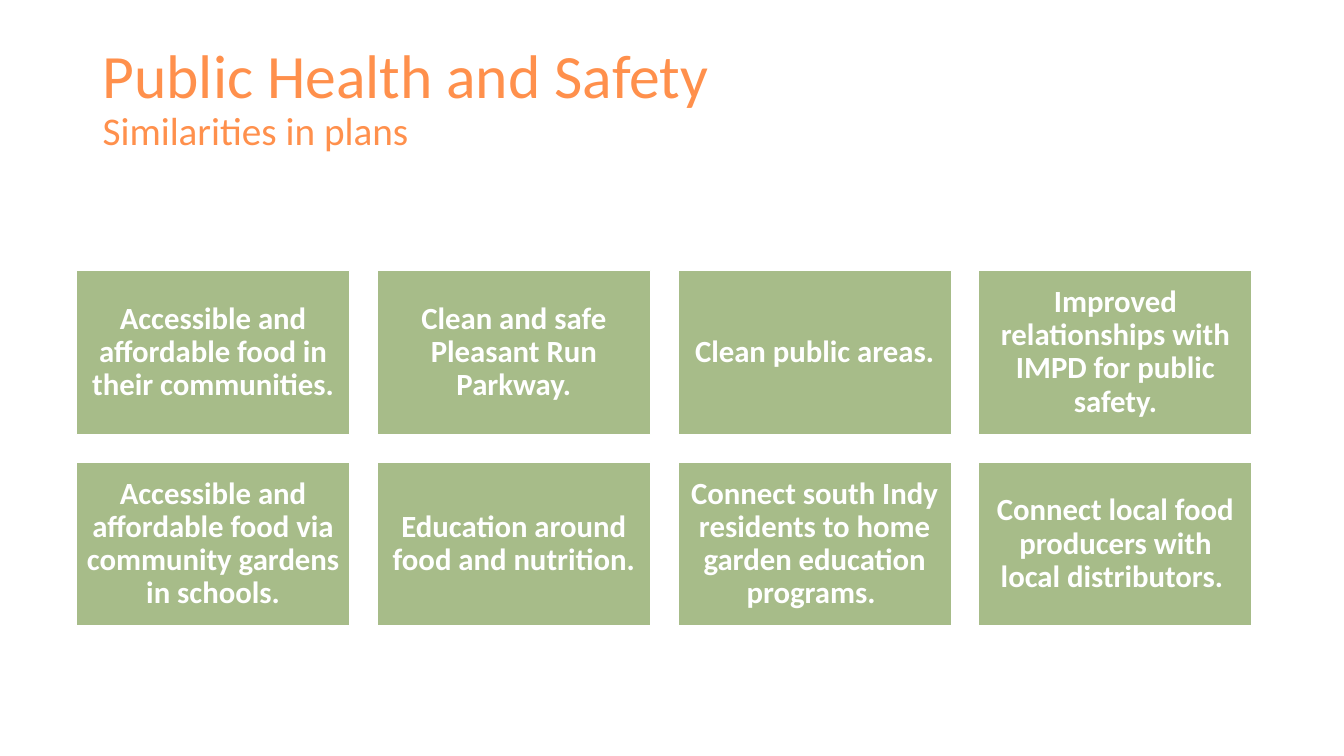
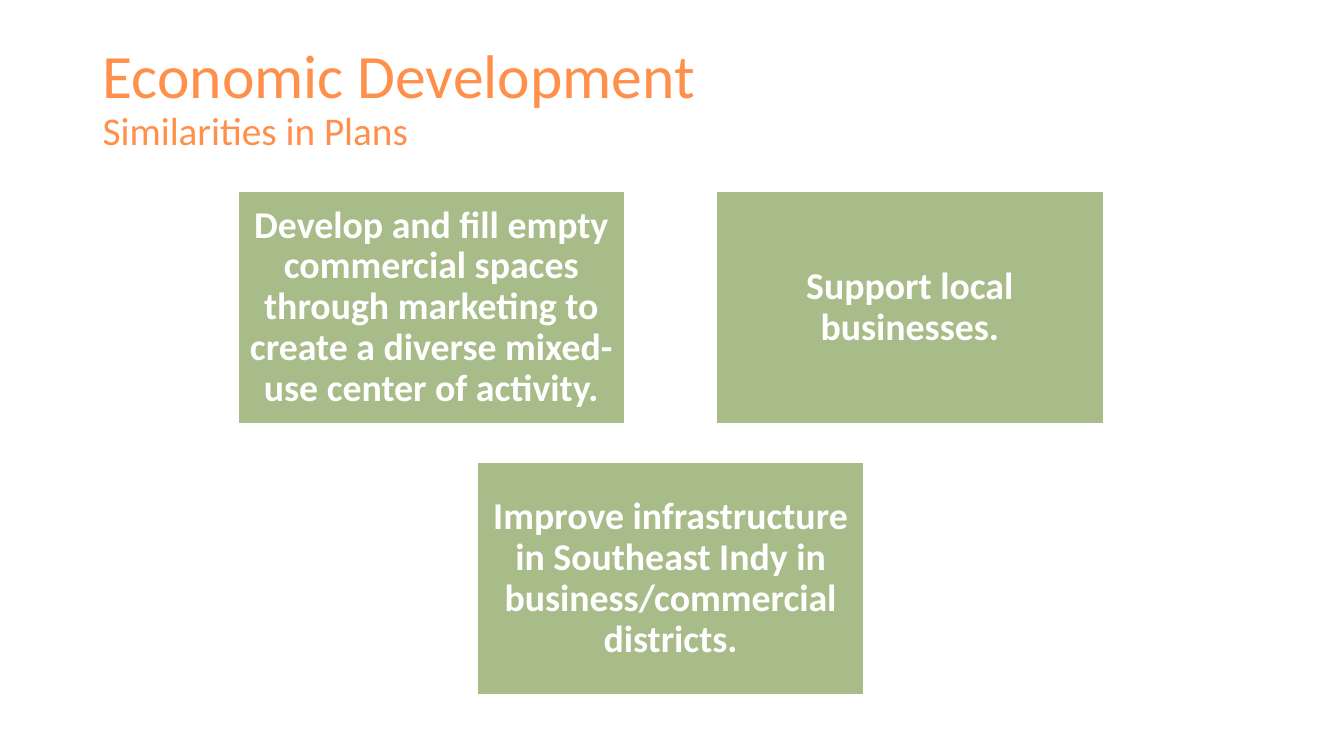
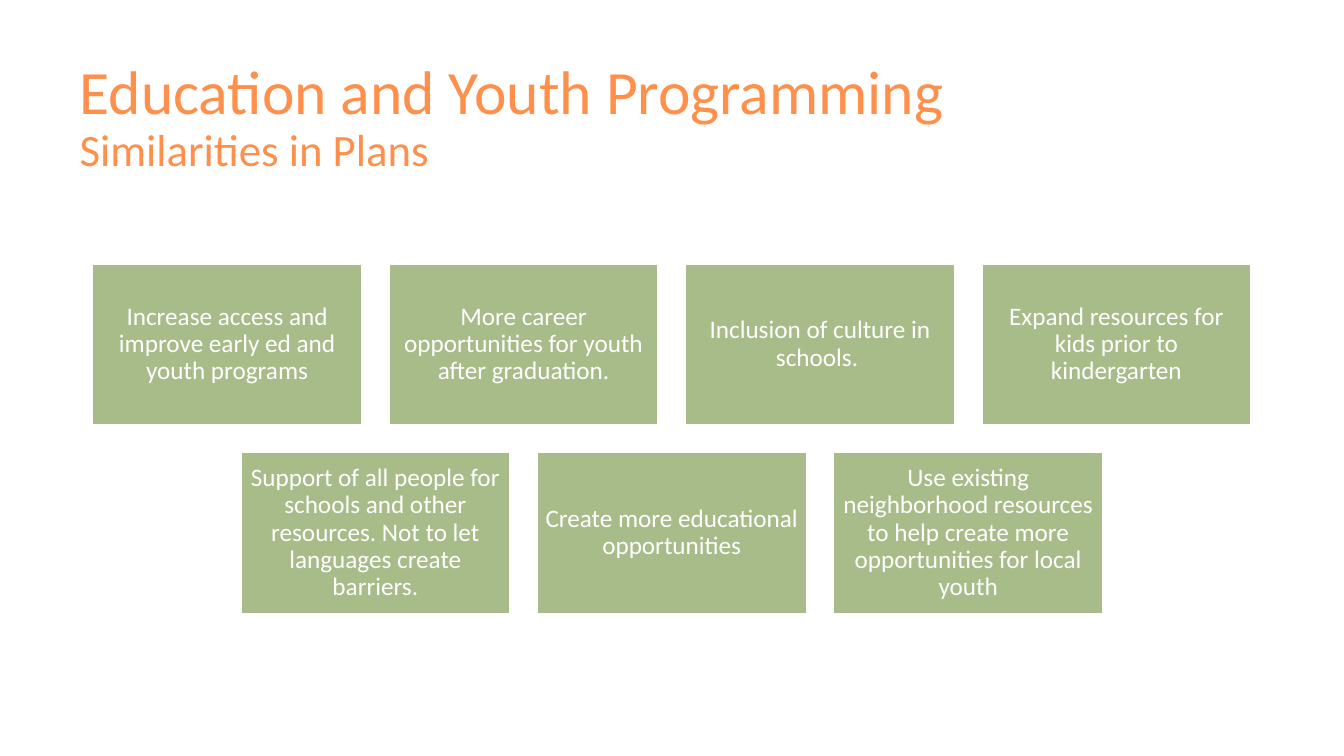
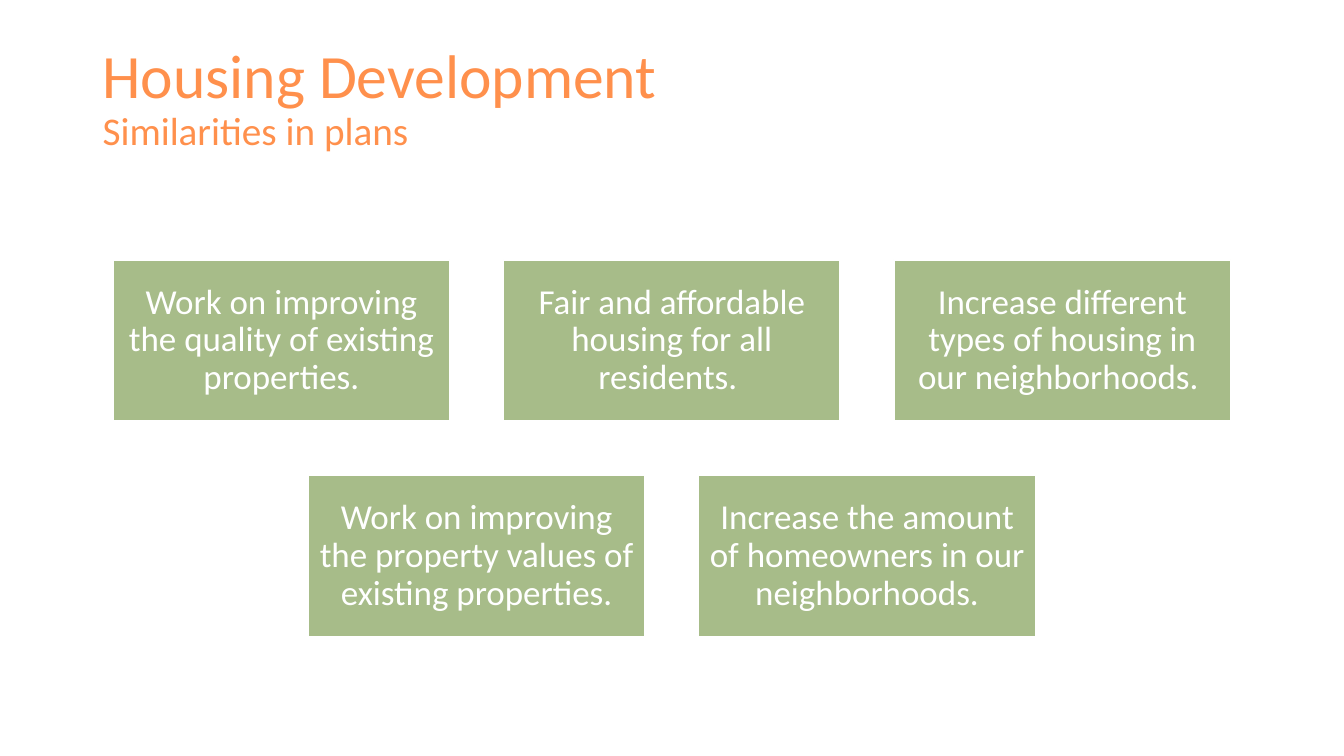
from dataclasses import dataclass

from pptx import Presentation
from pptx.dml.color import RGBColor
from pptx.enum.shapes import MSO_SHAPE
from pptx.enum.text import MSO_ANCHOR, MSO_AUTO_SIZE, PP_ALIGN
from pptx.util import Cm, Pt

RECT = MSO_SHAPE.RECTANGLE
TOP, MIDDLE = MSO_ANCHOR.TOP, MSO_ANCHOR.MIDDLE
LEFT, CENTER = PP_ALIGN.LEFT, PP_ALIGN.CENTER
NO_FIT = MSO_AUTO_SIZE.NONE
TITLE_ONLY = 5


# Colours, font and type sizes
@dataclass(frozen=True)
class Theme:
    font: str = "Calibri"
    orange: RGBColor = RGBColor(0xFF, 0x90, 0x4C)
    green: RGBColor = RGBColor(0xA7, 0xBC, 0x89)
    white: RGBColor = RGBColor(0xFF, 0xFF, 0xFF)
    head: int = 44
    sub: int = 28
    sub_big: int = 32
    safety: int = 22
    money: int = 27
    school: int = 18
    homes: int = 25
    spacing: float = 0.9


# Size and spacing of a set of cards, in centimetres
@dataclass(frozen=True)
class Grid:
    mid: float
    top: float
    width: float
    height: float
    gap: float
    row_gap: float


class Deck:
    def __init__(self, theme):
        self.theme = theme
        self.prs = Presentation()
        self.prs.slide_width = Cm(33.87)
        self.prs.slide_height = Cm(19.05)
        self.slide = None

    def text(self, para, words, size, color, align, bold=False):
        para.alignment = align
        para.line_spacing = self.theme.spacing
        para.space_before = Pt(0)
        run = para.add_run()
        run.text = words
        font = run.font
        font.name, font.size, font.bold = self.theme.font, Pt(size), bold
        font.color.rgb = color

    def title(self, head, sub, size, left=2.33, top=1.02):
        layout = self.prs.slide_layouts[TITLE_ONLY]
        self.slide = self.prs.slides.add_slide(layout)
        box = self.slide.shapes.title
        box.left, box.top = Cm(left), Cm(top)
        box.width, box.height = Cm(29.21), Cm(3.15)
        frame = box.text_frame
        frame.auto_size = NO_FIT
        frame.word_wrap = True
        frame.vertical_anchor = TOP
        color = self.theme.orange
        self.text(frame.paragraphs[0], head, self.theme.head, color, LEFT)
        self.text(frame.add_paragraph(), sub, size, color, LEFT)

    def card(self, left, top, width, height, words, size, bold):
        box = self.slide.shapes.add_shape(
            RECT, Cm(left), Cm(top), Cm(width), Cm(height))
        box.shadow.inherit = False
        box.fill.solid()
        box.fill.fore_color.rgb = self.theme.green
        box.line.color.rgb = self.theme.white
        box.line.width = Pt(1)
        frame = box.text_frame
        frame.word_wrap = True
        frame.vertical_anchor = MIDDLE
        # Padding grows with the type size
        pad = Cm(size * 0.01)
        frame.margin_left = frame.margin_right = pad
        frame.margin_top = frame.margin_bottom = pad
        self.text(frame.paragraphs[0], words, size, self.theme.white,
                  CENTER, bold)

    def cards(self, grid, rows, size, bold=False):
        step = grid.width + grid.gap
        for i, row in enumerate(rows):
            # Each row is centred on the same axis
            start = grid.mid - (len(row) * step - grid.gap) / 2
            top = grid.top + i * (grid.height + grid.row_gap)
            for j, words in enumerate(row):
                self.card(start + j * step, top, grid.width, grid.height,
                          words, size, bold)


def main():
    theme = Theme()
    deck = Deck(theme)

    # Health and safety
    deck.title("Public Health and Safety", "Similarities in plans", theme.sub)
    deck.cards(Grid(16.74, 6.81, 6.89, 4.14, 0.69, 0.69), [
        ["Accessible and affordable food in their communities.",
         "Clean and safe Pleasant Run Parkway.",
         "Clean public areas.",
         "Improved relationships with IMPD for public safety."],
        ["Accessible and affordable food via community gardens in schools.",
         "Education around food and nutrition.",
         "Connect south Indy residents to home garden education programs. ",
         "Connect local food producers with local distributors. "],
    ], theme.safety, bold=True)

    # Economy
    deck.title("Economic Development", "Similarities in Plans", theme.sub)
    deck.cards(Grid(16.9, 4.83, 9.75, 5.84, 2.31, 0.99), [
        ["Develop and fill empty commercial spaces through marketing to "
         "create a diverse mixed-use center of activity.",
         "Support local businesses."],
        ["Improve infrastructure in Southeast Indy in business/commercial "
         "districts."],
    ], theme.money, bold=True)

    # Education
    deck.title("Education and Youth Programming", "Similarities in Plans",
               theme.sub_big, left=1.75, top=1.42)
    deck.cards(Grid(16.93, 6.65, 6.78, 4.06, 0.69, 0.69), [
        ["Increase access and improve early ed and youth programs",
         "More career opportunities for youth after graduation.",
         "Inclusion of culture in schools. ",
         "Expand resources for kids prior to kindergarten"],
        ["Support of all people for schools and other resources. "
         "Not to let languages create barriers.",
         "Create more educational opportunities",
         "Use existing neighborhood resources to help create more "
         "opportunities for local youth"],
    ], theme.school)

    # Housing
    deck.title("Housing Development", "Similarities in plans", theme.sub)
    deck.cards(Grid(16.93, 6.55, 8.48, 4.06, 1.36, 1.38), [
        ["Work on improving the quality of existing properties.",
         "Fair and affordable housing for all residents. ",
         "Increase different types of housing in our neighborhoods. "],
        ["Work on improving the property values of existing properties.",
         "Increase the amount of homeowners in our neighborhoods."],
    ], theme.homes)

    deck.prs.save("out.pptx")


if __name__ == "__main__":
    main()
